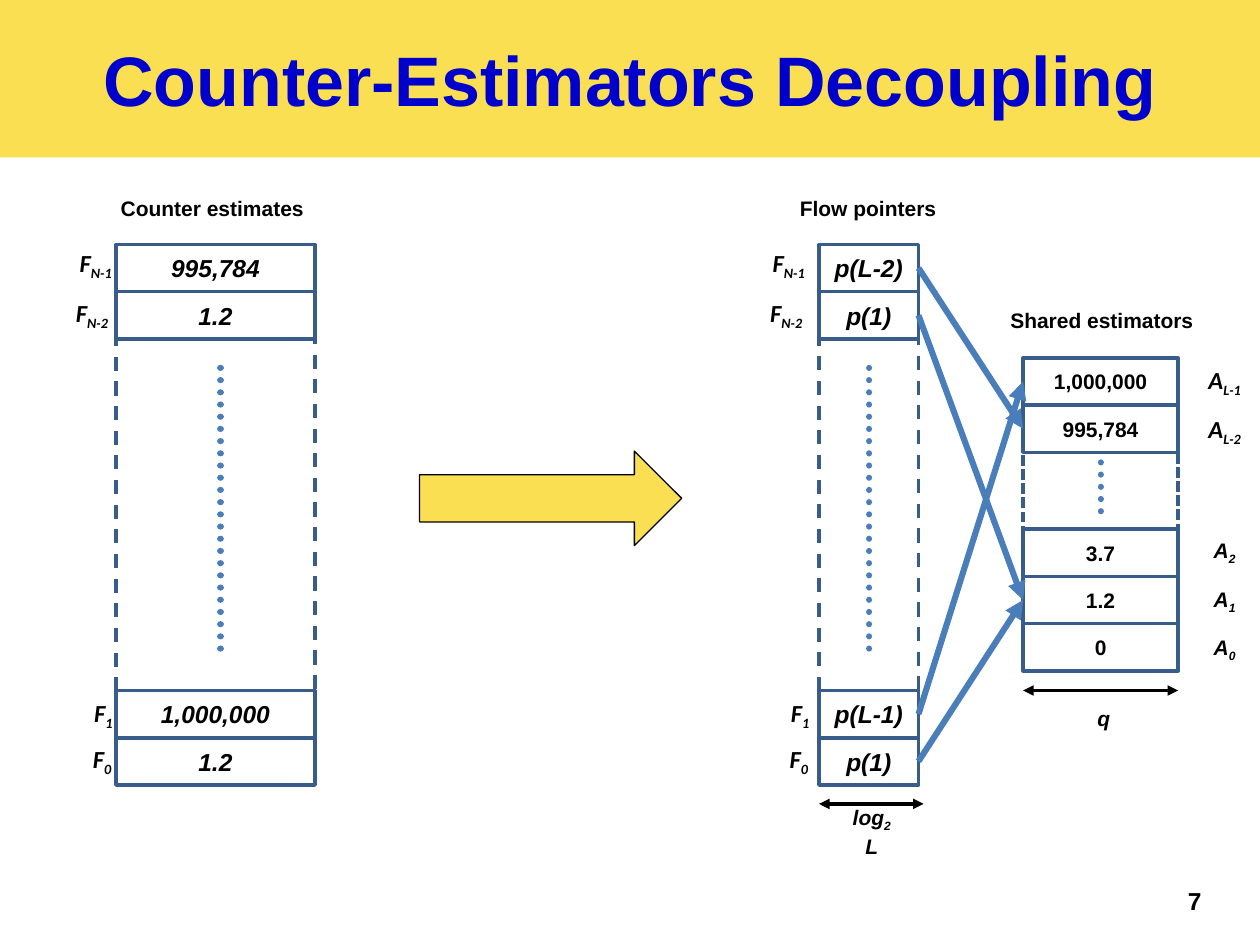
from dataclasses import dataclass

from lxml import etree
from pptx import Presentation
from pptx.dml.color import RGBColor
from pptx.enum.dml import MSO_LINE
from pptx.enum.shapes import MSO_CONNECTOR, MSO_SHAPE
from pptx.enum.text import MSO_ANCHOR, PP_ALIGN
from pptx.oxml.ns import qn
from pptx.util import Inches, Pt

RECTANGLE, RIGHT_ARROW = MSO_SHAPE.RECTANGLE, MSO_SHAPE.RIGHT_ARROW
STRAIGHT = MSO_CONNECTOR.STRAIGHT
DASH, SHORT_DASH, DOTS = MSO_LINE.DASH, MSO_LINE.SQUARE_DOT, MSO_LINE.ROUND_DOT
MIDDLE, TOP = MSO_ANCHOR.MIDDLE, MSO_ANCHOR.TOP
CENTER, LEFT = PP_ALIGN.CENTER, PP_ALIGN.LEFT
LEFT_SITE, RIGHT_SITE = 1, 3


@dataclass(frozen=True)
class Theme:
    yellow = RGBColor.from_string("FBDF53")
    title = RGBColor.from_string("0000CC")
    black = RGBColor.from_string("000000")
    border = RGBColor.from_string("385D8A")
    pointer = RGBColor.from_string("4A7EBB")
    font = "Arial"
    label_font = "Calibri"
    title_size = 40
    large = 14
    small = 12
    border_width = 2
    pointer_width = 3.5


THEME = Theme()
ROW = 3 / 8
TABLE_TOP, TABLE_END = 1.94, 5.48
SHARED_TOP, SHARED_END = 2.84, 4.2


def add_run(paragraph, text, size, font=THEME.font, color=THEME.black,
            italic=False, subscript=False):
    run = paragraph.add_run()
    run.text = text
    run.font.name = font
    run.font.size = Pt(size)
    run.font.bold = True
    run.font.italic = italic
    run.font.color.rgb = color
    if subscript:
        run.font._element.set("baseline", "-25000")


def add_title(slide, text):
    title = slide.shapes.title
    title.left, title.top = Inches(0), Inches(0)
    title.width, title.height = Inches(10), Inches(1.25)
    title.fill.solid()
    title.fill.fore_color.rgb = THEME.yellow
    title.text_frame.vertical_anchor = MIDDLE
    paragraph = title.text_frame.paragraphs[0]
    paragraph.alignment = CENTER
    add_run(paragraph, text, THEME.title_size, color=THEME.title)


def add_text(slide, left, top, width, height, anchor=TOP, alignment=LEFT):
    """Add an empty text box and return its paragraph."""
    box = slide.shapes.add_textbox(
        Inches(left), Inches(top), Inches(width), Inches(height))
    box.text_frame.word_wrap = False
    box.text_frame.vertical_anchor = anchor
    paragraph = box.text_frame.paragraphs[0]
    paragraph.alignment = alignment
    return paragraph


def add_caption(slide, left, top, width, text, size=THEME.small):
    add_run(add_text(slide, left, top, width, 0.3), text, size)


def add_label(slide, center_x, center_y, base, subscript="", rest="",
              size=THEME.small, font=THEME.font):
    """Add an italic symbol with a subscript, centred on a point."""
    width, height = 0.56, 0.38
    paragraph = add_text(slide, center_x - width / 2, center_y - height / 2,
                         width, height, MIDDLE, CENTER)
    for text, lowered in ((base, False), (subscript, True), (rest, False)):
        if text:
            add_run(paragraph, text, size, font, italic=True, subscript=lowered)


def add_box(slide, left, top, width, height, dash=None):
    box = slide.shapes.add_shape(
        RECTANGLE, Inches(left), Inches(top), Inches(width), Inches(height))
    box.shadow.inherit = False
    box.fill.background()
    box.line.color.rgb = THEME.border
    box.line.width = Pt(THEME.border_width)
    if dash:
        box.line.dash_style = dash
    return box


def add_rows(slide, left, top, width, values, size, italic=False):
    """Stack one cell for each value and return the cells."""
    cells = []
    for index, value in enumerate(values):
        cell = add_box(slide, left, top + index * ROW, width, ROW)
        frame = cell.text_frame
        frame.margin_left = frame.margin_right = 0
        frame.vertical_anchor = MIDDLE
        frame.paragraphs[0].alignment = CENTER
        add_run(frame.paragraphs[0], value, size, italic=italic)
        cells.append(cell)
    return cells


def add_line(slide, start, end, color, width, heads=()):
    line = slide.shapes.add_connector(
        STRAIGHT, *(Inches(value) for value in (*start, *end)))
    line.line.color.rgb = color
    line.line.width = Pt(width)
    properties = line._element.spPr
    for head in heads:
        etree.SubElement(line.line._get_or_add_ln(), qn(f"a:{head}"), type="triangle")
    etree.SubElement(properties, qn("a:effectLst"))
    return line


def add_dots(slide, x, top, bottom):
    dots = add_line(slide, (x, top), (x, bottom), THEME.pointer, THEME.pointer_width)
    dots.line.dash_style = DOTS
    dots.line._get_or_add_ln().set("cap", "rnd")


def add_pointer(slide, source, target):
    pointer = add_line(slide, (0, 0), (1, 1), THEME.pointer,
                       THEME.pointer_width, ("tailEnd",))
    pointer.begin_connect(source, RIGHT_SITE)
    pointer.end_connect(target, LEFT_SITE)


def add_width_mark(slide, left, right, y):
    add_line(slide, (left, y), (right, y), THEME.black, THEME.border_width,
             ("headEnd", "tailEnd"))


def add_flow_table(slide, left, width, dots_x, values, label_centers):
    """Add a column of flows, shortened in the middle, and return its cells."""
    gap_top = TABLE_TOP + 2 * ROW
    add_box(slide, left, gap_top, width, TABLE_END - gap_top, DASH)
    cells = []
    for top, pair in ((TABLE_TOP, values[:2]), (TABLE_END, values[2:])):
        cells += add_rows(slide, left, top, width, pair, THEME.large, italic=True)
    add_dots(slide, dots_x, 2.92, 5.18)
    label_rows = (2.1, 2.5, 5.67, 6.04)
    for x, y, subscript in zip(label_centers, label_rows, ("N-1", "N-2", "1", "0")):
        add_label(slide, x, y, "F", subscript, size=THEME.large, font=THEME.label_font)
    return cells


def add_shared_table(slide, left, width):
    gap_top = SHARED_TOP + 2 * ROW
    add_box(slide, left, gap_top, width, SHARED_END - gap_top, SHORT_DASH)
    cells = add_rows(slide, left, SHARED_TOP, width, ("1,000,000", "995,784"), THEME.small)
    cells += add_rows(slide, left, SHARED_END, width, ("3.7", "1.2", "0"), THEME.small)
    add_dots(slide, left + width / 2, 3.67, 4.12)
    for y, subscript in ((3.03, "L-1"), (3.42, "L-2")):
        add_label(slide, 9.72, y, "A", subscript, size=THEME.large, font=THEME.label_font)
    for y, subscript in ((4.38, "2"), (4.77, "1"), (5.15, "0")):
        add_label(slide, 9.72, y, "A", subscript)
    return cells


def add_block_arrow(slide):
    arrow = slide.shapes.add_shape(
        RIGHT_ARROW, Inches(3.33), Inches(3.58), Inches(2.08), Inches(0.75))
    arrow.shadow.inherit = False
    arrow.fill.solid()
    arrow.fill.fore_color.rgb = THEME.yellow
    arrow.line.color.rgb = THEME.black
    arrow.line.width = Pt(0.75)


def main():
    presentation = Presentation()
    presentation.slide_width, presentation.slide_height = Inches(10), Inches(7.5)
    slide = presentation.slides.add_slide(presentation.slide_layouts[5])
    add_title(slide, "Counter-Estimators Decoupling")
    add_caption(slide, 9.33, 6.98, 0.67, "7", THEME.large)

    add_caption(slide, 0.86, 1.5, 1.67, "Counter estimates")
    add_flow_table(slide, 0.92, 1.58, 1.75, ("995,784", "1.2", "1,000,000", "1.2"),
                   (0.76, 0.73, 0.82, 0.81))
    add_block_arrow(slide)

    add_caption(slide, 6.25, 1.5, 1.3, "Flow pointers")
    flows = add_flow_table(slide, 6.5, 0.79, 6.9, ("p(L-2)", "p(1)", "p(L-1)", "p(1)"),
                           (6.26, 6.24, 6.35, 6.34))
    add_caption(slide, 7.92, 2.39, 1.67, "Shared estimators")
    estimators = add_shared_table(slide, 8.12, 1.23)
    for flow, target in zip(flows, (1, 3, 0, 3)):
        add_pointer(slide, flow, estimators[target])

    add_width_mark(slide, 6.5, 7.33, 6.38)
    add_label(slide, 6.92, 6.6, "log", "2", " L")
    add_width_mark(slide, 8.12, 9.35, 5.48)
    add_label(slide, 8.76, 5.7, "q")
    presentation.save("out.pptx")


if __name__ == "__main__":
    main()
